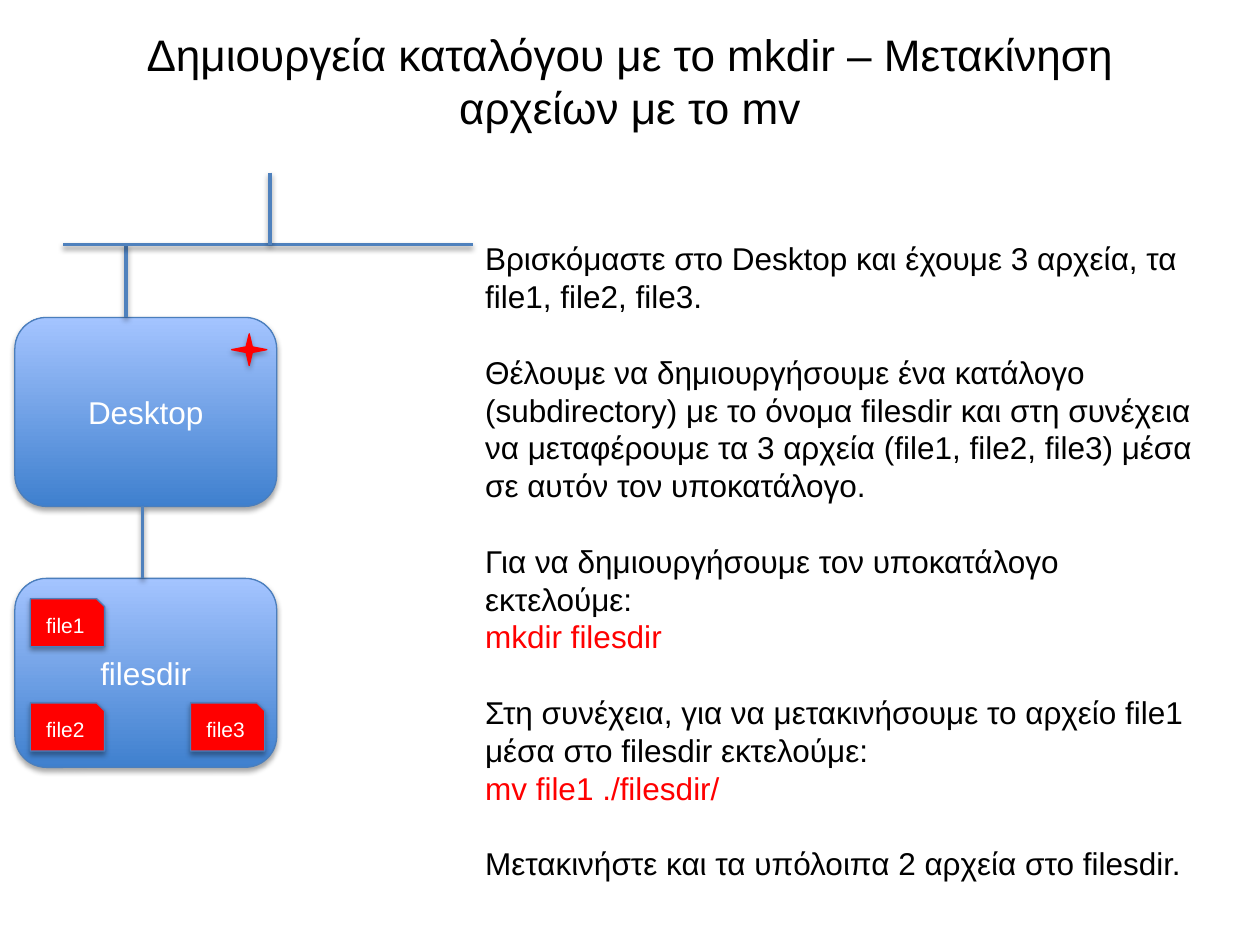
"""Build a slide on creating a directory with mkdir and moving files with mv."""
from lxml import etree
from pptx import Presentation
from pptx.dml.color import RGBColor
from pptx.enum.shapes import MSO_CONNECTOR, MSO_SHAPE
from pptx.enum.text import MSO_ANCHOR, PP_ALIGN
from pptx.oxml.ns import qn
from pptx.util import Cm, Pt

STRAIGHT = MSO_CONNECTOR.STRAIGHT
ROUNDED, SNIPPED, STAR = (
    MSO_SHAPE.ROUNDED_RECTANGLE, MSO_SHAPE.SNIP_1_RECTANGLE, MSO_SHAPE.STAR_4_POINT)
CENTER, LEFT = PP_ALIGN.CENTER, PP_ALIGN.LEFT
MIDDLE, TOP = MSO_ANCHOR.MIDDLE, MSO_ANCHOR.TOP

COLORS = {
    "black": "000000",
    "white": "FFFFFF",
    "red": "FF0000",
    "edge": "4B7EBC",
    "branch": "4F81BD",
    "deep": "3F80CE",
    "pale": "A4C4FF",
}
FONT = "Arial"
LEADING = 1.2
BODY_SIZE = 18

FOLDER_LEFT, FOLDER_WIDTH, FOLDER_HEIGHT = 0.3, 5.28, 3.81
DESKTOP_TOP, FILESDIR_TOP = 6.4, 11.66
BRANCH_TOP = 4.93

TITLE = "Δημιουργεία καταλόγου με το mkdir – Μετακίνηση αρχείων με το mv"
STEPS = [
    ("Βρισκόμαστε στο Desktop και έχουμε 3 αρχεία, τα file1, file2, file3.", None),
    ("Θέλουμε να δημιουργήσουμε ένα κατάλογο (subdirectory) με το όνομα filesdir "
     "και στη συνέχεια να μεταφέρουμε τα 3 αρχεία (file1, file2, file3) μέσα σε "
     "αυτόν τον υποκατάλογο.", None),
    ("Για να δημιουργήσουμε τον υποκατάλογο εκτελούμε:", "mkdir filesdir"),
    ("Στη συνέχεια, για να μετακινήσουμε το αρχείο file1 μέσα στο filesdir "
     "εκτελούμε:", "mv file1 ./filesdir/"),
    ("Μετακινήστε και τα υπόλοιπα 2 αρχεία στο filesdir.", None),
]
BRANCHES = [
    (2.54, BRANCH_TOP, 2.54, DESKTOP_TOP),
    (1.27, BRANCH_TOP, 9.53, BRANCH_TOP),
    (5.44, 3.48, 5.44, BRANCH_TOP),
    (2.87, DESKTOP_TOP + FOLDER_HEIGHT, 2.87, FILESDIR_TOP),
]
FILES = [("file2", 0.61, 14.17), ("file3", 3.84, 14.17), ("file1", 0.61, 12.07)]


def rgb(name):
    """Return the named colour."""
    return RGBColor.from_string(COLORS[name])


def apply(target, values):
    """Set every attribute of target that values lists."""
    for name, value in values.items():
        setattr(target, name, value)


def add_shadow(element, opacity, distance):
    """Give a shape or connector a soft shadow straight below it."""
    properties = element._element.spPr
    for old in properties.findall(qn("a:effectLst")):
        properties.remove(old)
    effects = etree.SubElement(properties, qn("a:effectLst"))
    shadow = etree.SubElement(
        effects, qn("a:outerShdw"), blurRad=str(Pt(3.1)), dist=str(Pt(distance)),
        dir="5400000", rotWithShape="0")
    color = etree.SubElement(shadow, qn("a:srgbClr"), val=COLORS["black"])
    etree.SubElement(color, qn("a:alpha"), val=str(opacity * 1000))


def write(para, text, size, color, align):
    """Put one formatted run of text in a paragraph."""
    para.alignment = align
    span = para.add_run()
    span.text = text
    apply(span.font, {"size": Pt(size), "name": FONT})
    span.font.color.rgb = rgb(color)


def add_text(page, bounds, anchor):
    """Add a wrapping text box and return its frame."""
    frame = page.shapes.add_textbox(*map(Cm, bounds)).text_frame
    apply(frame, {"word_wrap": True, "vertical_anchor": anchor})
    return frame


def add_title(page):
    """Add the centred title."""
    para = add_text(page, (1.27, 0.76, 22.86, 1.73), MIDDLE).paragraphs[0]
    para.line_spacing = Pt(25.2 * LEADING)
    write(para, TITLE, 25.2, "black", CENTER)


def add_steps(page):
    """Add the explanation, with each command in red below its step."""
    frame = add_text(page, (9.53, 4.7, 14.99, 13.34), TOP)
    leading = Pt(BODY_SIZE * LEADING)
    for index, (step, command) in enumerate(STEPS):
        para = frame.add_paragraph() if index else frame.paragraphs[0]
        apply(para, {"line_spacing": leading, "space_before": leading if index else Pt(0)})
        write(para, step, BODY_SIZE, "black", LEFT)
        if command:
            para = frame.add_paragraph()
            para.line_spacing = leading
            write(para, command, BODY_SIZE, "red", LEFT)


def add_box(page, kind, bounds, edge="edge", label="", size=BODY_SIZE):
    """Add a shadowed red shape with an optional centred label."""
    box = page.shapes.add_shape(kind, *map(Cm, bounds))
    box.fill.solid()
    box.fill.fore_color.rgb = rgb("red")
    box.line.color.rgb = rgb(edge)
    box.line.width = Pt(0.75)
    add_shadow(box, 35, 1.8)
    if label:
        apply(box.text_frame, {"word_wrap": True, "vertical_anchor": MIDDLE})
        write(box.text_frame.paragraphs[0], label, size, "white", CENTER)
    return box


def add_folder(page, label, top):
    """Add a directory box with a vertical blue gradient."""
    box = add_box(page, ROUNDED, (FOLDER_LEFT, top, FOLDER_WIDTH, FOLDER_HEIGHT), label=label)
    box.fill.gradient()
    box.fill.gradient_angle = 90
    for stop, color, position in zip(box.fill.gradient_stops, ("deep", "pale"), (0, 1)):
        stop.color.rgb = rgb(color)
        stop.position = position


def add_branch(page, ends):
    """Add one line of the directory tree."""
    branch = page.shapes.add_connector(STRAIGHT, *map(Cm, ends))
    branch.line.color.rgb = rgb("branch")
    branch.line.width = Pt(2)
    add_shadow(branch, 38, 1.6)


def main():
    """Build and save the deck."""
    deck = Presentation()
    apply(deck, {"slide_width": Cm(25.4), "slide_height": Cm(19.05)})
    page = deck.slides.add_slide(deck.slide_layouts[6])
    add_title(page)
    add_folder(page, "filesdir", FILESDIR_TOP)
    add_folder(page, "Desktop", DESKTOP_TOP)
    add_box(page, STAR, (4.67, 6.73, 0.71, 0.64), edge="red")
    add_steps(page)
    for ends in BRANCHES:
        add_branch(page, ends)
    for label, left, top in FILES:
        add_box(page, SNIPPED, (left, top, 1.5, 0.97), label=label, size=12)
    deck.save("out.pptx")


if __name__ == "__main__":
    main()
